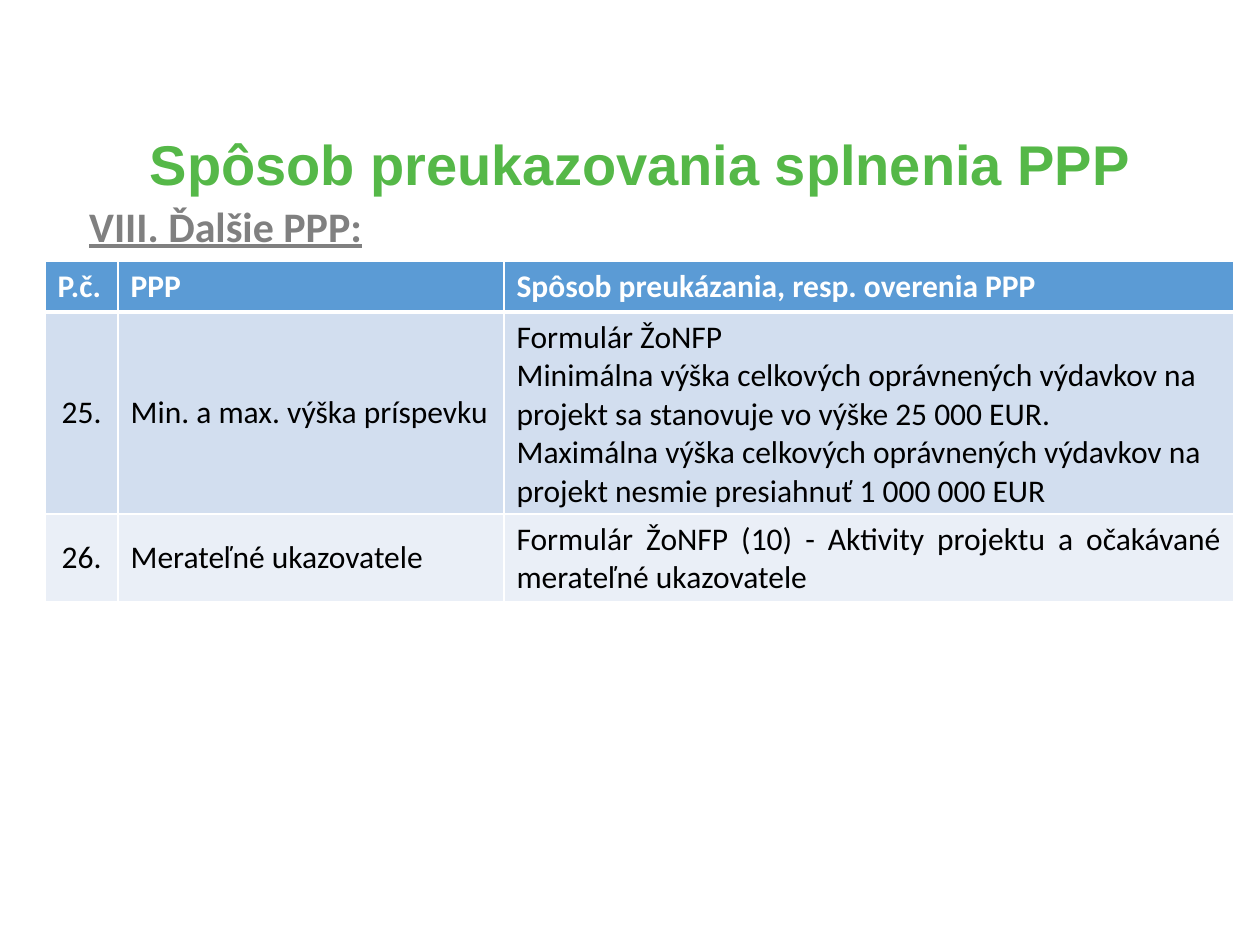
from dataclasses import dataclass

from lxml import etree
from pptx import Presentation
from pptx.dml.color import RGBColor
from pptx.enum.text import MSO_ANCHOR, PP_ALIGN
from pptx.oxml.ns import qn
from pptx.util import Cm, Pt

LEFT, CENTER, JUSTIFY = PP_ALIGN.LEFT, PP_ALIGN.CENTER, PP_ALIGN.JUSTIFY
TOP, MIDDLE = MSO_ANCHOR.TOP, MSO_ANCHOR.MIDDLE


@dataclass(frozen=True)
class Theme:
    green: str = "55B848"
    grey: str = "808080"
    black: str = "000000"
    white: str = "FFFFFF"
    header: str = "5B9BD5"
    bands: tuple = ("D2DEEF", "EAEFF7")
    title_font: str = "Arial"
    body_font: str = "Calibri"
    title_size: int = 32
    subtitle_size: int = 24
    body_size: int = 18


THEME = Theme()


def write(tf, text, size=THEME.body_size, font=THEME.body_font,
          color=THEME.black, bold=False, underline=False, align=LEFT,
          anchor=TOP, spacing=None):
    """Fill a text frame, one paragraph for each line of text."""
    tf.word_wrap = True
    tf.vertical_anchor = anchor
    for i, line in enumerate(text.split("\n")):
        p = tf.paragraphs[0] if i == 0 else tf.add_paragraph()
        p.alignment = align
        if spacing:
            p.line_spacing = spacing
        r = p.add_run()
        r.text = line
        r.font.name = font
        r.font.size = Pt(size)
        r.font.bold = bold
        r.font.underline = underline
        r.font.color.rgb = RGBColor.from_string(color)


def set_borders(cell, bottom=1):
    """Draw white lines on all four sides of a cell."""
    tcPr = cell._tc.get_or_add_tcPr()
    widths = {"a:lnL": 1, "a:lnR": 1, "a:lnT": 1, "a:lnB": bottom}
    for i, (tag, width) in enumerate(widths.items()):
        ln = etree.Element(qn(tag), w=str(Pt(width)))
        fill = etree.SubElement(ln, qn("a:solidFill"))
        etree.SubElement(fill, qn("a:srgbClr"), val=THEME.white)
        tcPr.insert(i, ln)


def add_text(slide, box, text, **fmt):
    sp = slide.shapes.add_textbox(*box)
    write(sp.text_frame, text, **fmt)


def add_conditions(slide, left, top, col_widths, row_heights, rows):
    """Header row, then banded rows of conditions."""
    table = slide.shapes.add_table(len(rows), len(col_widths), left, top,
                                   sum(col_widths), sum(row_heights)).table
    for col, width in zip(table.columns, col_widths):
        col.width = width
    for i, (row, height) in enumerate(zip(rows, row_heights)):
        table.rows[i].height = height
        head = i == 0
        fill = THEME.header if head else THEME.bands[(i - 1) % 2]
        for j, (text, align) in enumerate(row):
            cell = table.cell(i, j)
            write(cell.text_frame, text, bold=head, align=align,
                  color=THEME.white if head else THEME.black)
            cell.vertical_anchor = TOP if head else MIDDLE
            cell.fill.solid()
            cell.fill.fore_color.rgb = RGBColor.from_string(fill)
            # A thick line parts the header from the body
            set_borders(cell, bottom=3 if head else 1)
            if i == 1:
                cell._tc.tcPr.find(qn("a:lnT")).set("w", str(Pt(3)))


ROWS = [
    [("P.č.", LEFT), ("PPP", LEFT),
     ("Spôsob preukázania, resp. overenia PPP", LEFT)],
    [("25.", CENTER), ("Min. a max. výška príspevku", LEFT),
     ("Formulár ŽoNFP\n"
      "Minimálna výška celkových oprávnených výdavkov na projekt "
      "sa stanovuje vo výške 25 000 EUR.\n"
      "Maximálna výška celkových oprávnených výdavkov na projekt "
      "nesmie presiahnuť 1 000 000 EUR", LEFT)],
    [("26.", CENTER), ("Merateľné ukazovatele", LEFT),
     ("Formulár ŽoNFP (10) - Aktivity projektu a očakávané "
      "merateľné ukazovatele", JUSTIFY)],
]


def main():
    prs = Presentation()
    prs.slide_width, prs.slide_height = Cm(25.4), Cm(19.05)
    slide = prs.slides.add_slide(prs.slide_layouts[6])

    # Title and section heading
    add_text(slide, (Cm(1.55), Cm(2.6), Cm(22.73), Cm(1.55)),
             "Spôsob preukazovania splnenia PPP", size=THEME.title_size,
             font=THEME.title_font, color=THEME.green, bold=True,
             align=CENTER, anchor=MIDDLE, spacing=0.9)
    add_text(slide, (Cm(1.55), Cm(3.91), Cm(21.67), Cm(1.27)),
             "VIII. Ďalšie PPP:", size=THEME.subtitle_size,
             color=THEME.grey, bold=True, underline=True, align=JUSTIFY)

    # Table of conditions
    add_conditions(slide, Cm(0.91), Cm(5.26),
                   [Cm(1.47), Cm(7.78), Cm(14.71)],
                   [Cm(1.03), Cm(4.07), Cm(1.78)], ROWS)

    prs.save("out.pptx")


if __name__ == "__main__":
    main()
